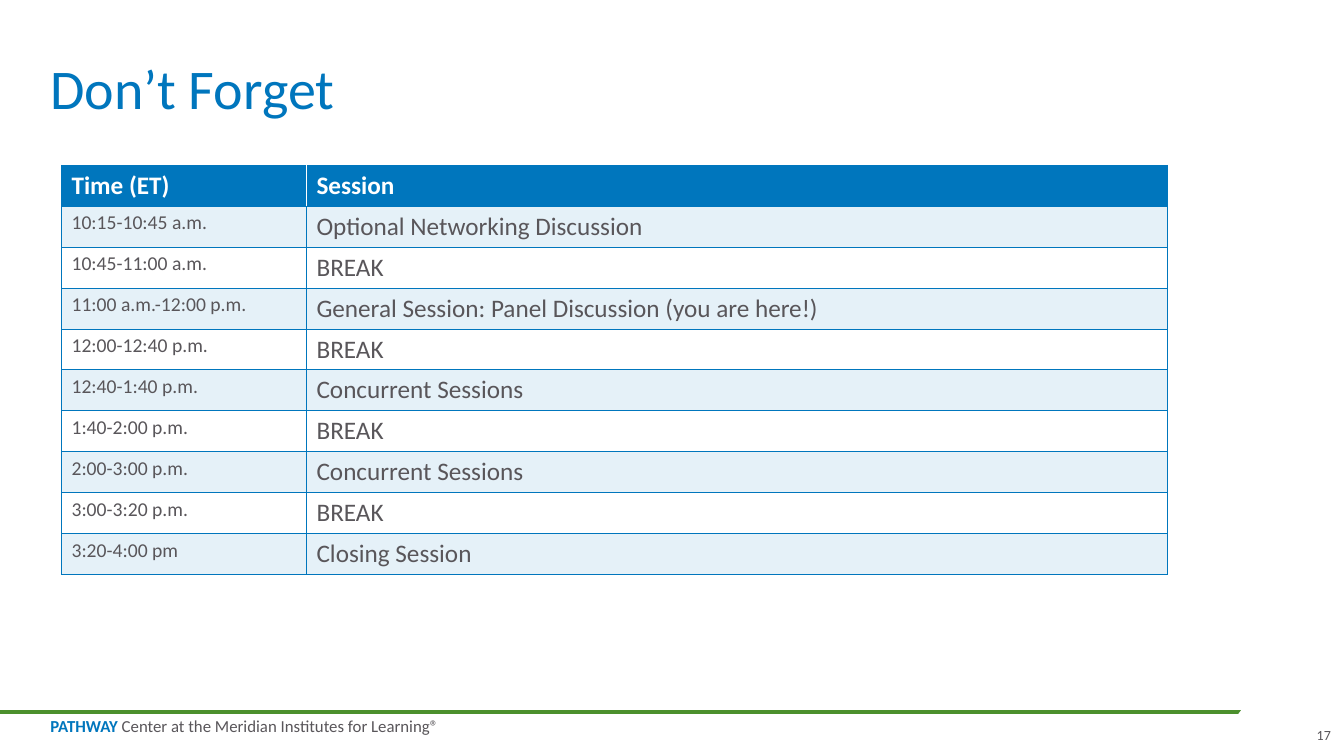
from pptx import Presentation
from pptx.dml.color import RGBColor
from pptx.enum.shapes import MSO_CONNECTOR, MSO_SHAPE
from pptx.enum.text import MSO_ANCHOR, PP_ALIGN
from pptx.oxml.ns import qn
from pptx.util import Inches, Pt
from lxml import etree

BLUE = RGBColor(0x00, 0x76, 0xBD)
GREEN = RGBColor(0x4C, 0x90, 0x2D)
GRAY = RGBColor(0x59, 0x56, 0x5A)
PALE = RGBColor(0xE5, 0xF1, 0xF8)
WHITE = RGBColor(0xFF, 0xFF, 0xFF)
FONT = "Calibri"
LINE = MSO_CONNECTOR.STRAIGHT
OVAL = MSO_SHAPE.OVAL
TOP, BOTTOM = MSO_ANCHOR.TOP, MSO_ANCHOR.BOTTOM
LEFT, RIGHT = PP_ALIGN.LEFT, PP_ALIGN.RIGHT

ROWS = [
    ("Time (ET)", "Session"),
    ("10:15-10:45 a.m.", "Optional Networking Discussion"),
    ("10:45-11:00 a.m.", "BREAK"),
    ("11:00 a.m.-12:00 p.m.", "General Session: Panel Discussion (you are here!)"),
    ("12:00-12:40 p.m.", "BREAK"),
    ("12:40-1:40 p.m.", "Concurrent Sessions"),
    ("1:40-2:00 p.m.", "BREAK"),
    ("2:00-3:00 p.m.", "Concurrent Sessions"),
    ("3:00-3:20 p.m.", "BREAK"),
    ("3:20-4:00 pm", "Closing Session"),
]
WIDTHS = (2.43, 8.54)
ROW_H = 0.406


def style(font, size, color, bold=False):
    font.name = FONT
    font.size = Pt(size)
    font.bold = bold
    font.color.rgb = color


def add_text(slide, box, runs, size, anchor=TOP, align=LEFT, spacing=1.0, wrap=True):
    frame = slide.shapes.add_textbox(*map(Inches, box)).text_frame
    frame.margin_left = frame.margin_right = 0
    frame.margin_top = frame.margin_bottom = 0
    frame.word_wrap = wrap
    frame.vertical_anchor = anchor
    para = frame.paragraphs[0]
    para.alignment = align
    para.line_spacing = spacing
    for text, color, bold in runs:
        run = para.add_run()
        run.text = text
        style(run.font, size, color, bold)


def add_rule(slide):
    """Green footer line, cut at a slant by a tilted white oval."""
    y = Inches(7.06)
    rule = slide.shapes.add_connector(LINE, 0, y, Inches(13), y)
    rule.line.color.rgb = GREEN
    rule.line.width = Pt(3)
    etree.SubElement(rule._element.spPr, qn("a:effectLst"))
    oval = slide.shapes.add_shape(OVAL, *map(Inches, (12.16, 6.77, 1.19, 0.58)))
    oval.rotation = 332.1
    oval.shadow.inherit = False
    oval.fill.solid()
    oval.fill.fore_color.rgb = WHITE
    oval.line.fill.background()


def add_borders(cell, colors):
    """Borders come before the fill in the cell properties."""
    props = cell._tc.get_or_add_tcPr()
    for i, (side, color) in enumerate(colors.items()):
        edge = etree.Element(qn("a:ln" + side), w=str(Pt(0.75)))
        fill = etree.SubElement(edge, qn("a:solidFill"))
        etree.SubElement(fill, qn("a:srgbClr"), val=str(color))
        props.insert(i, edge)


def add_agenda(slide):
    box = (0.61, 1.64, sum(WIDTHS), ROW_H * len(ROWS))
    table = slide.shapes.add_table(len(ROWS), len(WIDTHS), *map(Inches, box)).table
    for col, width in zip(table.columns, WIDTHS):
        col.width = Inches(width)
    for r, row in enumerate(ROWS):
        table.rows[r].height = Inches(ROW_H)
        head = r == 0
        for c, text in enumerate(row):
            cell = table.cell(r, c)
            cell.text_frame.text = text
            size = 14 if c == 0 and not head else 18
            run = cell.text_frame.paragraphs[0].runs[0]
            style(run.font, size, WHITE if head else GRAY, head)
            cell.fill.solid()
            cell.fill.fore_color.rgb = BLUE if head else PALE if r % 2 else WHITE
            # White divider between the two header cells
            edges = dict.fromkeys("LRTB", BLUE)
            if head:
                edges["R" if c == 0 else "L"] = WHITE
            add_borders(cell, edges)


def main():
    deck = Presentation()
    deck.slide_width, deck.slide_height = Inches(13.33), Inches(7.5)
    slide = deck.slides.add_slide(deck.slide_layouts[6])

    # Footer
    add_rule(slide)
    owner = [("PATHWAY", BLUE, True),
             (" Center at the Meridian Institutes for Learning®", GRAY, False)]
    add_text(slide, (0.5, 7.13, 4.02, 0.17), owner, 12, spacing=0.85)

    # Title and agenda
    add_text(slide, (0.5, 0, 12.4, 1.21), [("Don’t Forget", BLUE, False)], 40,
             anchor=BOTTOM, spacing=0.9)
    add_agenda(slide)

    # Page number
    add_text(slide, (13.03, 7.2, 0.17, 0.17), [("17", GRAY, False)], 10,
             anchor=BOTTOM, align=RIGHT, wrap=False)
    deck.save("out.pptx")


if __name__ == "__main__":
    main()
